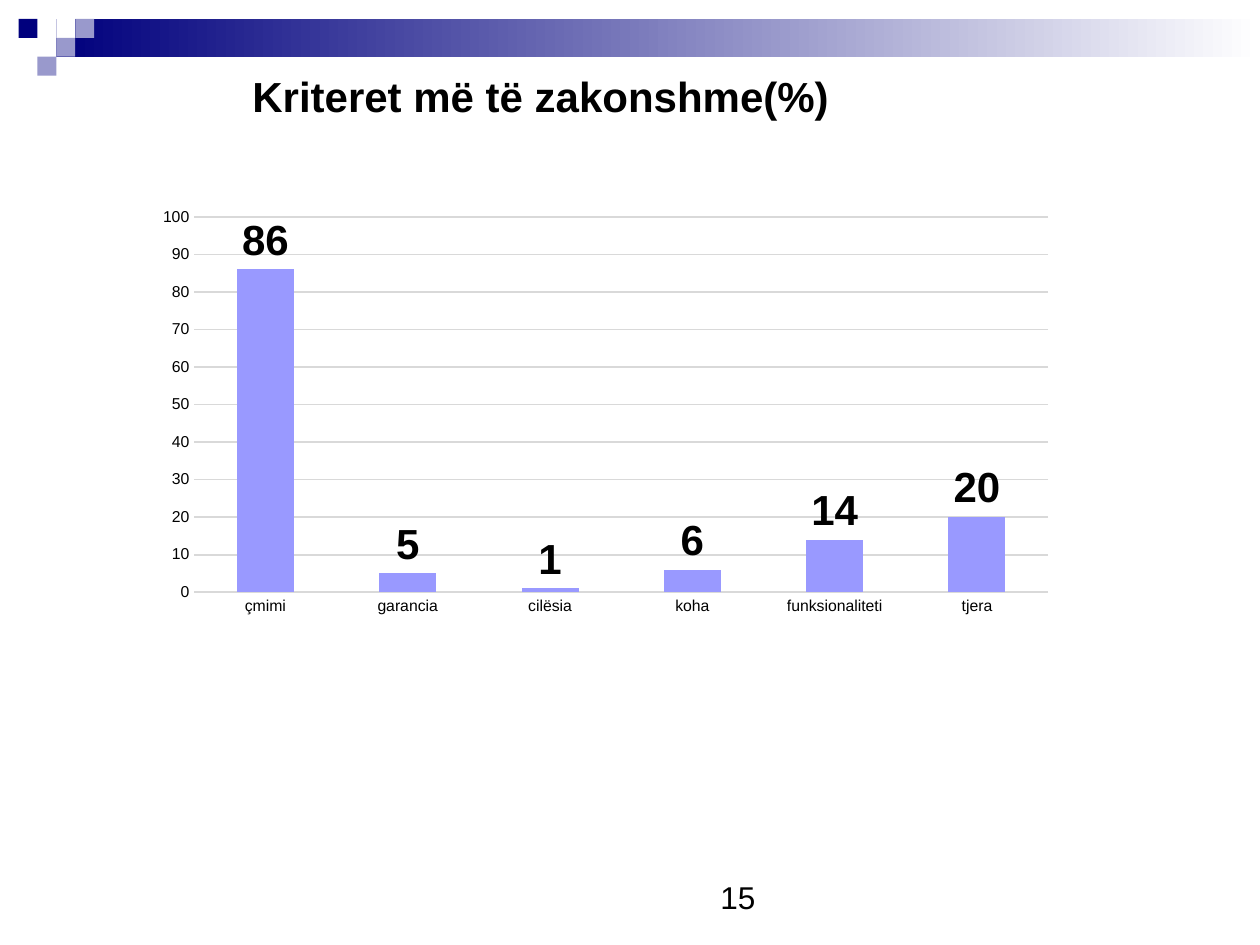
from lxml import etree
from pptx import Presentation
from pptx.chart.data import CategoryChartData
from pptx.dml.color import RGBColor
from pptx.enum.chart import XL_CHART_TYPE as ChartType
from pptx.enum.chart import XL_LABEL_POSITION as LabelPos
from pptx.enum.chart import XL_TICK_LABEL_POSITION as TickLabels
from pptx.enum.chart import XL_TICK_MARK as TickMark
from pptx.enum.shapes import MSO_SHAPE as Shape
from pptx.enum.text import MSO_ANCHOR as Anchor
from pptx.enum.text import PP_ALIGN as Align
from pptx.oxml.ns import qn
from pptx.util import Pt

NAVY = RGBColor(0x00, 0x00, 0x7D)
LAVENDER = RGBColor(0x99, 0x99, 0xCC)
BAR = RGBColor(0x99, 0x99, 0xFF)
GRID = RGBColor(0xD9, 0xD9, 0xD9)
BLACK = RGBColor(0, 0, 0)
WHITE = RGBColor(0xFF, 0xFF, 0xFF)
FONT = "Arial"

CRITERIA = {"çmimi": 86, "garancia": 5, "cilësia": 1, "koha": 6,
            "funksionaliteti": 14, "tjera": 20}


def set_font(font, size, bold=False, color=BLACK):
    font.name, font.size, font.bold = FONT, Pt(size), bold
    font.color.rgb = color


def write(tf, text, size=18, bold=False, color=BLACK, align=Align.LEFT,
          anchor=Anchor.TOP):
    tf.word_wrap = False
    tf.vertical_anchor = anchor
    p = tf.paragraphs[0]
    p.alignment = align
    r = p.add_run()
    r.text = text
    set_font(r.font, size, bold, color)


def add_rect(slide, x, y, w, h):
    sp = slide.shapes.add_shape(Shape.RECTANGLE, Pt(x), Pt(y), Pt(w), Pt(h))
    sp.shadow.inherit = False
    sp.line.fill.background()
    return sp


def add_banner(slide, x, y, w, h):
    """Gradient bar with a staircase of small squares at its left end."""
    cell = h / 2
    bar_x = x + 2 * cell
    fill = add_rect(slide, bar_x, y, w - 2 * cell, h).fill
    fill.gradient()
    fill.gradient_angle = 0
    for stop, color, pos in zip(fill.gradient_stops, (NAVY, WHITE), (0, 1)):
        stop.color.rgb, stop.position = color, pos

    squares = [(2, 0, WHITE), (3, 0, LAVENDER), (0, 0, NAVY),
               (2, 1, LAVENDER), (1, 2, LAVENDER)]
    for col, row, color in squares:
        sp = add_rect(slide, x + col * cell, y + row * cell, cell, cell)
        sp.fill.solid()
        sp.fill.fore_color.rgb = color


def add_title(slide, x, y, w, h):
    sp = slide.shapes.title
    sp.left, sp.top, sp.width, sp.height = Pt(x), Pt(y), Pt(w), Pt(h)
    write(sp.text_frame, "Kriteret më të zakonshme(%)", size=24, bold=True,
          align=Align.CENTER, anchor=Anchor.MIDDLE)


def set_plot_area(chart, **fractions):
    """Fix the inner plot area, as fractions of the chart frame."""
    plot_area = chart._chartSpace.chart.plotArea
    for old in plot_area.findall(qn("c:layout")):
        plot_area.remove(old)
    layout = etree.Element(qn("c:layout"))
    manual = etree.SubElement(layout, qn("c:manualLayout"))
    settings = {"layoutTarget": "inner", "xMode": "edge", "yMode": "edge",
                **fractions}
    for name, value in settings.items():
        etree.SubElement(manual, qn(f"c:{name}")).set("val", str(value))
    plot_area.insert(0, layout)


def add_criteria_chart(slide, x, y, w, h):
    data = CategoryChartData()
    data.categories = list(CRITERIA)
    data.add_series("%", list(CRITERIA.values()))
    chart = slide.shapes.add_chart(ChartType.COLUMN_CLUSTERED, Pt(x), Pt(y),
                                   Pt(w), Pt(h), data).chart
    chart.has_legend = False
    chart.has_title = False
    set_font(chart.font, 9)
    # Room for tick labels on the left and below
    left, top, right, bottom = 31, 20, 11, 25.5
    set_plot_area(chart, x=left / w, y=top / h,
                  w=(w - left - right) / w, h=(h - top - bottom) / h)

    # Bars and their values
    plot = chart.plots[0]
    plot.gap_width = 150
    plot.vary_by_categories = False
    fill = plot.series[0].format.fill
    fill.solid()
    fill.fore_color.rgb = BAR
    plot.has_data_labels = True
    labels = plot.data_labels
    labels.show_value = True
    labels.position = LabelPos.OUTSIDE_END
    set_font(labels.font, 24, bold=True)

    # Axes and gridlines
    value_axis, cat_axis = chart.value_axis, chart.category_axis
    value_axis.minimum_scale, value_axis.maximum_scale = 0, 100
    value_axis.major_unit = 10
    value_axis.has_major_gridlines = True
    value_axis.format.line.fill.background()
    for axis in (value_axis, cat_axis):
        axis.major_tick_mark = axis.minor_tick_mark = TickMark.NONE
        axis.tick_label_position = TickLabels.NEXT_TO_AXIS
        set_font(axis.tick_labels.font, 9)
    for line in (value_axis.major_gridlines.format.line, cat_axis.format.line):
        line.color.rgb = GRID
        line.width = Pt(1)


def add_page_number(slide, x, y, w, h):
    box = slide.shapes.add_textbox(Pt(x), Pt(y), Pt(w), Pt(h))
    write(box.text_frame, "15", size=18)


def main():
    prs = Presentation()
    prs.slide_width, prs.slide_height = Pt(720), Pt(540)
    slide = prs.slides.add_slide(prs.slide_layouts[5])
    add_banner(slide, 10.6, 10.8, 709.4, 21.6)
    add_title(slide, 135.4, 36.7, 347, 36)
    add_criteria_chart(slide, 80, 104, 530, 260)
    add_page_number(slide, 404.6, 498.2, 46, 29)
    prs.save("out.pptx")


if __name__ == "__main__":
    main()
